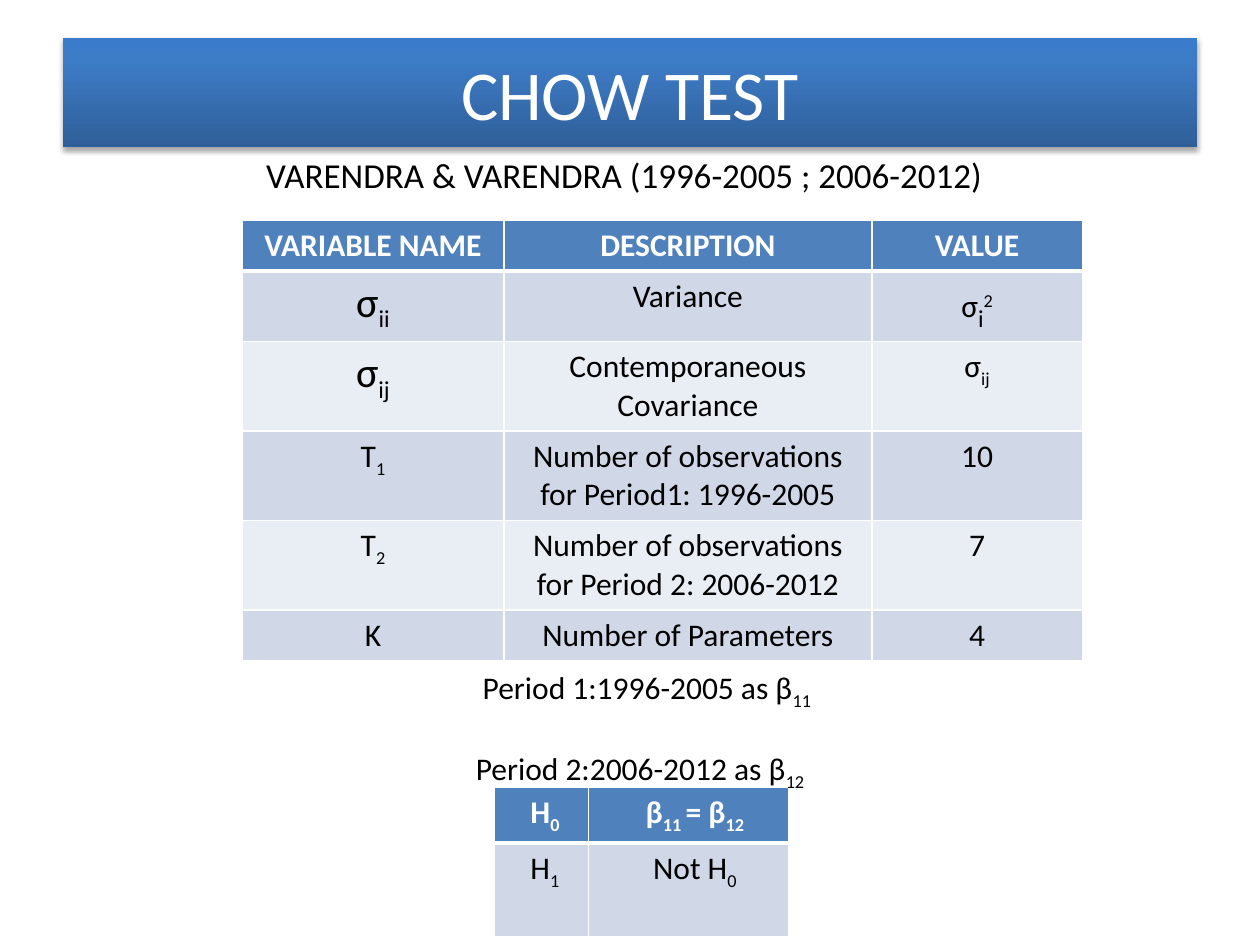
from lxml import etree
from pptx import Presentation
from pptx.dml.color import RGBColor
from pptx.enum.shapes import MSO_SHAPE
from pptx.enum.text import MSO_ANCHOR, PP_ALIGN
from pptx.oxml import parse_xml
from pptx.oxml.ns import nsdecls, qn
from pptx.util import Inches, Pt

RECTANGLE = MSO_SHAPE.RECTANGLE
CENTER = PP_ALIGN.CENTER
MIDDLE = MSO_ANCHOR.MIDDLE

FONT = "Calibri"
COLORS = {
    "white": "FFFFFF", "black": "000000", "header": "4F81BD",
    "odd_row": "D0D8E8", "even_row": "E9EDF4",
    "banner_bottom": "2F5F99", "banner_middle": "3D7CC7", "banner_top": "3A7CCB",
}
SUB, SUPER = -25, 30


def add_runs(paragraph, runs, size=18, color="black", bold=False):
    paragraph.alignment = CENTER
    for text, baseline, *own_size in runs:
        run = paragraph.add_run()
        run.text = text
        font = run.font
        font.name = FONT
        font.size = Pt(own_size[0] if own_size else size)
        font.bold = bold
        font.color.rgb = RGBColor.from_string(COLORS[color])
        if baseline:
            font._element.set("baseline", str(baseline * 1000))


def add_text(slide, box, lines, size):
    shape = slide.shapes.add_textbox(*map(Inches, box))
    frame = shape.text_frame
    frame.word_wrap = True
    for index, runs in enumerate(lines):
        paragraph = frame.add_paragraph() if index else frame.paragraphs[0]
        add_runs(paragraph, runs, size)
    return frame


def add_banner(slide, box, title):
    shape = slide.shapes.add_shape(RECTANGLE, *map(Inches, box))
    stops = "".join(
        f'<a:gs pos="{position * 1000}"><a:srgbClr val="{COLORS[name]}"/></a:gs>'
        for position, name in [(0, "banner_bottom"), (80, "banner_middle"), (100, "banner_top")]
    )
    gradient = parse_xml(
        f'<a:gradFill {nsdecls("a")} rotWithShape="1"><a:gsLst>{stops}</a:gsLst>'
        '<a:lin ang="16200000" scaled="0"/></a:gradFill>'
    )
    properties = shape._element.spPr
    properties.find(qn("a:prstGeom")).addnext(gradient)
    shape.line.fill.background()
    shape.shadow.inherit = False
    properties.find(qn("a:effectLst")).append(parse_xml(
        f'<a:outerShdw {nsdecls("a")} blurRad="{Pt(3.1)}" dist="{Pt(1.8)}" dir="5400000" '
        'rotWithShape="0"><a:srgbClr val="000000"><a:alpha val="35000"/></a:srgbClr></a:outerShdw>'
    ))
    shape.text_frame.vertical_anchor = MIDDLE
    add_runs(shape.text_frame.paragraphs[0], [(title, 0)], 40, "white")


def set_borders(cell, top, bottom):
    properties = cell._tc.get_or_add_tcPr()
    edges = [("lnL", 1), ("lnR", 1), ("lnT", top), ("lnB", bottom)]
    for position, (tag, width) in enumerate(edges):
        line = etree.Element(qn(f"a:{tag}"), w=str(Pt(width)))
        fill = etree.SubElement(line, qn("a:solidFill"))
        etree.SubElement(fill, qn("a:srgbClr"), val=COLORS["white"])
        properties.insert(position, line)


def add_table(slide, left, top, widths, heights, rows, left_margins=None):
    table = slide.shapes.add_table(
        len(rows), len(widths), Inches(left), Inches(top),
        Inches(sum(widths)), Inches(sum(heights)),
    ).table
    for column, width in zip(table.columns, widths):
        column.width = Inches(width)
    for row, height in zip(table.rows, heights):
        row.height = Inches(height)
    for row_index, row in enumerate(rows):
        header = row_index == 0
        fill = "header" if header else "odd_row" if row_index % 2 else "even_row"
        for column_index, runs in enumerate(row):
            cell = table.cell(row_index, column_index)
            cell.fill.solid()
            cell.fill.fore_color.rgb = RGBColor.from_string(COLORS[fill])
            set_borders(cell, 3 if row_index == 1 else 1, 3 if header else 1)
            if left_margins:
                cell.margin_left = Inches(left_margins[column_index])
            add_runs(cell.text_frame.paragraphs[0], runs,
                     color="white" if header else "black", bold=header)


def main():
    presentation = Presentation()
    presentation.slide_width = Inches(10)
    presentation.slide_height = Inches(7.5)
    slide = presentation.slides.add_slide(presentation.slide_layouts[6])

    add_banner(slide, (0.5, 0.3, 9, 0.87), "CHOW TEST")
    subtitle = add_text(slide, (0.33, 1.17, 9.25, 0.5),
                        [[("VARENDRA & VARENDRA (1996-2005 ; 2006-2012)", 0)]], 20)
    subtitle.paragraphs[0].space_before = Pt(4)

    hypotheses = [
        [[("H", 0), ("0", SUB)], [("β", 0), ("11 ", SUB), ("= β", 0), ("12", SUB)]],
        [[("H", 0), ("1", SUB)], [("Not H", 0), ("0", SUB)]],
    ]
    add_table(slide, 3.92, 6.25, [0.75, 1.59], [0.44, 0.74], hypotheses, [0.16, 0.2])

    variables = [
        [[("VARIABLE NAME", 0)], [("DESCRIPTION", 0)], [("VALUE", 0)]],
        [[("σ", 0, 24), ("ii", SUB, 24)], [("Variance", 0)],
         [("σ", 0), ("i", SUB, 24), ("2", SUPER)]],
        [[("σ", 0, 24), ("ij", SUB, 24)], [("Contemporaneous Covariance", 0)],
         [("σ", 0), ("ij", SUB)]],
        [[("T", 0), ("1", SUB)], [("Number of observations for Period1: 1996-2005", 0)],
         [("10", 0)]],
        [[("T", 0), ("2", SUB)], [("Number of observations for Period 2: 2006-2012", 0)],
         [("7", 0)]],
        [[("K", 0)], [("Number of Parameters", 0)], [("4", 0)]],
    ]
    add_table(slide, 1.92, 1.75, [2.08, 2.92, 1.67],
              [0.4, 0.56, 0.71, 0.71, 0.71, 0.4], variables)

    periods = add_text(slide, (3.33, 5.25, 3.5, 0.91), [
        [("Period 1:1996-2005 as β", 0), ("11", SUB)],
        [("Period 2:2006-2012 as β", 0), ("12", SUB)],
    ], 18)
    first, second = periods.paragraphs
    first._p.get_or_add_pPr().set("marL", str(Inches(0.11)))
    second.space_before = Pt(22)

    presentation.save("out.pptx")


if __name__ == "__main__":
    main()
